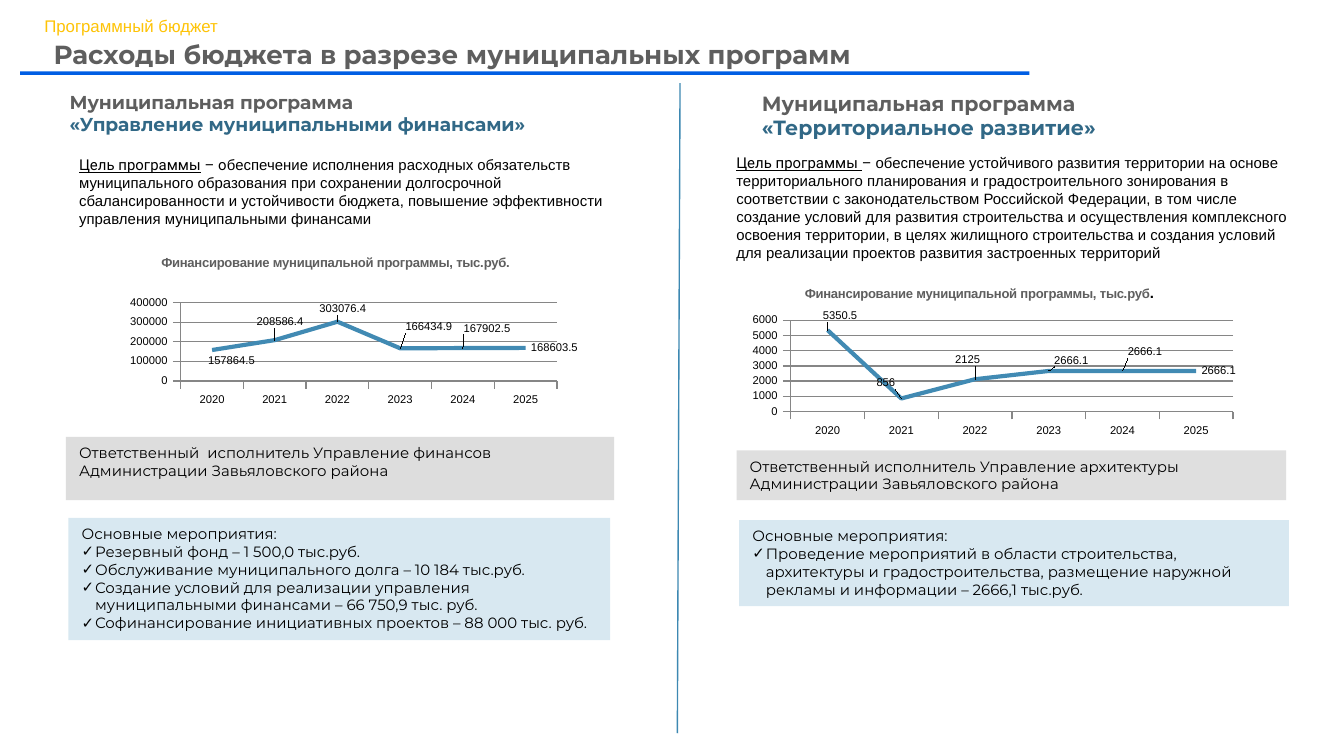
from dataclasses import dataclass

from lxml import etree
from pptx import Presentation
from pptx.chart.data import CategoryChartData
from pptx.dml.color import RGBColor
from pptx.enum.chart import XL_CHART_TYPE, XL_LABEL_POSITION, XL_MARKER_STYLE
from pptx.enum.shapes import MSO_CONNECTOR, MSO_SHAPE
from pptx.enum.text import MSO_ANCHOR, PP_ALIGN
from pptx.oxml.ns import qn
from pptx.util import Inches, Pt

LINE_CHART, LABEL_RIGHT = XL_CHART_TYPE.LINE, XL_LABEL_POSITION.RIGHT
NO_MARKER = XL_MARKER_STYLE.NONE
RECTANGLE, STRAIGHT = MSO_SHAPE.RECTANGLE, MSO_CONNECTOR.STRAIGHT
TOP, MIDDLE, LEFT = MSO_ANCHOR.TOP, MSO_ANCHOR.MIDDLE, PP_ALIGN.LEFT
SLIDE_W = Inches(10)
SLIDE_H = SLIDE_W * 9 // 16
C15 = "http://schemas.microsoft.com/office/drawing/2012/chart"


@dataclass(frozen=True)
class Theme:
    grey: str = "5E5E5E"
    black: str = "000000"
    amber: str = "FEC306"
    blue: str = "005EE4"
    program: str = "316886"
    divider: str = "3D88B2"
    curve: str = "418AB3"
    grid: str = "868686"
    measures: str = "D8E8F1"
    head_font: str = "Montserrat"
    goal_font: str = "Roboto"
    body_font: str = "Arial"
    title_size: float = 14
    section_size: float = 9
    body_size: float = 8
    chart_title_size: float = 7
    chart_size: float = 6


THEME = Theme()


@dataclass(frozen=True)
class Box:
    """Place in percent of the slide's width and height."""
    left: float
    top: float
    width: float
    height: float

    def emu(self) -> tuple[int, int, int, int]:
        return (round(SLIDE_W * self.left / 100), round(SLIDE_H * self.top / 100),
                round(SLIDE_W * self.width / 100), round(SLIDE_H * self.height / 100))


@dataclass(frozen=True)
class Span:
    text: str
    size: float = THEME.body_size
    font: str = THEME.head_font
    color: str = THEME.black
    bold: bool = False
    underline: bool = False


@dataclass(frozen=True)
class Finance:
    """Line chart; plot, title place and label shifts are shares of the chart."""
    box: Box
    values: tuple[float, ...]
    top_value: int
    step: int
    plot: tuple[float, float, float, float]
    title_at: tuple[float, float]
    title_dot: Span
    shifts: tuple[tuple[float, float], ...]


@dataclass(frozen=True)
class Program:
    name: str
    name_size: float
    name_box: Box
    goal_lead: tuple[Span, ...]
    goal: str
    goal_box: Box
    finance: Finance
    executor: str
    executor_box: Box
    executor_fill: str
    measures: tuple[str, ...]
    measures_box: Box


def rgb(code: str) -> RGBColor:
    return RGBColor.from_string(code)


def style(font, span: Span) -> None:
    font.size, font.name, font.bold = Pt(span.size), span.font, span.bold
    font.underline = span.underline
    font.color.rgb = rgb(span.color)


def add_bullet(props) -> None:
    color = etree.SubElement(props, qn("a:buClr"))
    etree.SubElement(color, qn("a:srgbClr"), val=THEME.black)
    etree.SubElement(props, qn("a:buFont"), typeface=THEME.body_font)
    etree.SubElement(props, qn("a:buChar"), char="✓")


def write(frame, lines: list[list[Span]], hanging: bool = False, anchor=TOP) -> None:
    frame.word_wrap, frame.vertical_anchor = True, anchor
    for index, spans in enumerate(lines):
        paragraph = frame.add_paragraph() if index else frame.paragraphs[0]
        paragraph.alignment = LEFT
        if hanging:
            props = paragraph._p.get_or_add_pPr()
            props.set("marL", str(Inches(0.1)))
            props.set("indent", str(-Inches(0.1)))
            if index:
                add_bullet(props)
        for span in spans:
            run = paragraph.add_run()
            run.text = span.text
            style(run.font, span)


def add_text(slide, box: Box, lines: list[list[Span]], anchor=TOP):
    frame = slide.shapes.add_textbox(*box.emu()).text_frame
    write(frame, lines, anchor=anchor)
    return frame


def add_panel(slide, box: Box, fill: str):
    panel = slide.shapes.add_shape(RECTANGLE, *box.emu())
    panel.shadow.inherit = False
    panel.fill.solid()
    panel.fill.fore_color.rgb = rgb(fill)
    panel.line.fill.background()
    return panel.text_frame


def layout(**parts: object):
    element = etree.Element(qn("c:layout"))
    manual = etree.SubElement(element, qn("c:manualLayout"))
    for tag, value in parts.items():
        etree.SubElement(manual, qn(f"c:{tag}"), val=str(value))
    return element


def drop_layout(element) -> None:
    for old in element.findall(qn("c:layout")):
        element.remove(old)


def hide_leader_lines(labels) -> None:
    extensions = etree.SubElement(labels, qn("c:extLst"))
    extension = etree.SubElement(extensions, qn("c:ext"), nsmap={"c15": C15},
                                 uri="{CE6537A1-D6FC-4f65-9D91-7224C49458BB}")
    etree.SubElement(extension, f"{{{C15}}}showLeaderLines", val="0")


def add_finance(slide, finance: Finance) -> None:
    data = CategoryChartData(number_format="General")
    data.categories = [str(year) for year in range(2020, 2026)]
    data.add_series("Series 1", finance.values)
    chart = slide.shapes.add_chart(LINE_CHART, *finance.box.emu(), data).chart
    chart.has_legend = False
    small = Span("", THEME.chart_size, THEME.body_font)
    style(chart.font, small)

    # Title and plot area
    heading = chart.chart_title
    caption = Span("Финансирование муниципальной программы, тыс.руб",
                   THEME.chart_title_size, THEME.body_font, THEME.grey, True)
    write(heading.text_frame, [[caption, finance.title_dot]])
    x, y = finance.title_at
    drop_layout(heading._element)
    heading._element.find(qn("c:tx")).addnext(layout(xMode="edge", yMode="edge", x=x, y=y))
    area = chart._chartSpace.chart.plotArea
    drop_layout(area)
    x, y, w, h = finance.plot
    area.insert(0, layout(layoutTarget="inner", xMode="edge", yMode="edge", x=x, y=y, w=w, h=h))

    # Axes
    axis = chart.value_axis
    axis.minimum_scale, axis.maximum_scale, axis.major_unit = 0, finance.top_value, finance.step
    axis.has_major_gridlines = True
    for line in (axis.format.line, axis.major_gridlines.format.line,
                 chart.category_axis.format.line):
        line.color.rgb, line.width = rgb(THEME.grid), Pt(0.75)

    # Curve and its shifted labels
    curve = chart.plots[0].series[0]
    curve.smooth = False
    curve.format.line.color.rgb, curve.format.line.width = rgb(THEME.curve), Pt(2.25)
    curve.marker.style = NO_MARKER
    labels = curve.data_labels
    labels.show_value, labels.position = True, LABEL_RIGHT
    style(labels.font, small)
    for index, (x, y) in enumerate(finance.shifts):
        label = curve.points[index].data_label
        style(label.font, small)
        label.position = LABEL_RIGHT
        element = labels._element.findall(qn("c:dLbl"))[index]
        element.find(qn("c:idx")).addnext(layout(x=x, y=y))
    hide_leader_lines(labels._element)


def add_program(slide, program: Program) -> None:
    font, size = THEME.head_font, program.name_size
    add_text(slide, program.name_box, [
        [Span("Муниципальная программа", size, font, THEME.grey, True)],
        [Span(program.name, size, font, THEME.program, True)]])
    add_text(slide, program.goal_box,
             [[*program.goal_lead, Span(program.goal, font=THEME.body_font)]])
    add_finance(slide, program.finance)
    write(add_panel(slide, program.executor_box, program.executor_fill),
          [[Span(program.executor)]])
    write(add_panel(slide, program.measures_box, THEME.measures),
          [[Span(line)] for line in ("Основные мероприятия:", *program.measures)], hanging=True)


GOAL = THEME.goal_font
PROGRAMS = (
    Program(
        "«Управление муниципальными финансами»", 10, Box(4.2, 11.1, 46.3, 8.36),
        (Span("Цель программы", font=GOAL, underline=True), Span(" – о", font=GOAL)),
        "беспечение исполнения расходных обязательств муниципального образования при сохранении "
        "долгосрочной сбалансированности и устойчивости бюджета, повышение эффективности "
        "управления муниципальными финансами", Box(4.9, 19.75, 42, 11.39),
        Finance(Box(8.2, 31.14, 35, 23.49),
                (157864.5, 208586.4, 303076.4, 166434.9, 167902.5, 168603.5), 400000, 100000,
                (0.15, 0.38, 0.8, 0.44), (0.1, 0.08),
                Span(".", THEME.chart_title_size, THEME.body_font, THEME.grey, True),
                ((-0.02, 0.06), (-0.05, -0.1), (-0.05, -0.07), (0, -0.12), (-0.01, -0.11))),
        "Ответственный  исполнитель Управление финансов Администрации Завьяловского района",
        Box(4.9, 57.8, 40.8, 8.36), "DDDDDD",
        ("Резервный фонд – 1 500,0 тыс.руб.",
         "Обслуживание муниципального долга – 10 184 тыс.руб.",
         "Создание условий для реализации управления муниципальными финансами – "
         "66 750,9 тыс. руб.",
         "Софинансирование инициативных проектов – 88 000 тыс. руб."),
        Box(5.1, 68.5, 40.3, 16.19)),
    Program(
        "«Территориальное развитие»", 11, Box(55.7, 11.1, 41.7, 8.36),
        (Span("Цель программы ", font=GOAL, underline=True), Span("– ", font=GOAL)),
        "обеспечение устойчивого развития территории на основе территориального планирования и "
        "градостроительного зонирования в соответствии с законодательством Российской Федерации, "
        "в том числе создание условий для развития строительства и осуществления комплексного "
        "освоения территории, в целях жилищного строительства и создания условий для реализации "
        "проектов развития застроенных территорий", Box(53.8, 19.5, 43.5, 16.19),
        Finance(Box(55.1, 35.55, 37.4, 22.78),
                (5350.5, 856, 2125, 2666.1, 2666.1, 2666.1), 6000, 1000,
                (0.1, 0.3, 0.88, 0.53), (0.12, 0.05),
                Span(".", THEME.body_size, THEME.body_font, THEME.black, True),
                ((-0.02, -0.08), (-0.06, -0.09), (-0.05, -0.11), (0, -0.06), (0, -0.11))),
        "Ответственный исполнитель Управление архитектуры Администрации Завьяловского района",
        Box(54.8, 59.6, 40.9, 6.58), "DFDFDF",
        ("Проведение мероприятий в области строительства, архитектуры и градостроительства, "
         "размещение наружной рекламы и информации – 2666,1 тыс.руб.",),
        Box(55, 68.8, 40.9, 11.39)),
)


def main() -> None:
    deck = Presentation()
    deck.slide_width, deck.slide_height = SLIDE_W, SLIDE_H
    slide = deck.slides.add_slide(deck.slide_layouts[6])

    # Header
    headers = (
        (Box(3.3, 4.09, 90, 6.58), MIDDLE, 0.9,
         Span("Расходы бюджета в разрезе муниципальных программ", THEME.title_size,
              THEME.head_font, THEME.grey, True)),
        (Box(2.6, 1.42, 19.6, 4.09), TOP, 1.0,
         Span("Программный бюджет", THEME.section_size, THEME.body_font, THEME.amber)))
    for box, anchor, spacing, span in headers:
        frame = add_text(slide, box, [[span]], anchor)
        frame.paragraphs[0].line_spacing = spacing
        frame.margin_left = frame.margin_right = Inches(0.07)
        frame.margin_top = frame.margin_bottom = Inches(0.04)
    add_panel(slide, Box(1.5, 9.43, 75.1, 0.5), THEME.blue)

    # Divider between the two programs
    divider = slide.shapes.add_connector(
        STRAIGHT, round(SLIDE_W * 0.506), round(SLIDE_H * 0.11),
        round(SLIDE_W * 0.504), round(SLIDE_H * 0.97))
    divider.line.color.rgb, divider.line.width = rgb(THEME.divider), Pt(0.75)
    etree.SubElement(divider._element.spPr, qn("a:effectLst"))

    for program in PROGRAMS:
        add_program(slide, program)
    deck.save("out.pptx")


if __name__ == "__main__":
    main()
